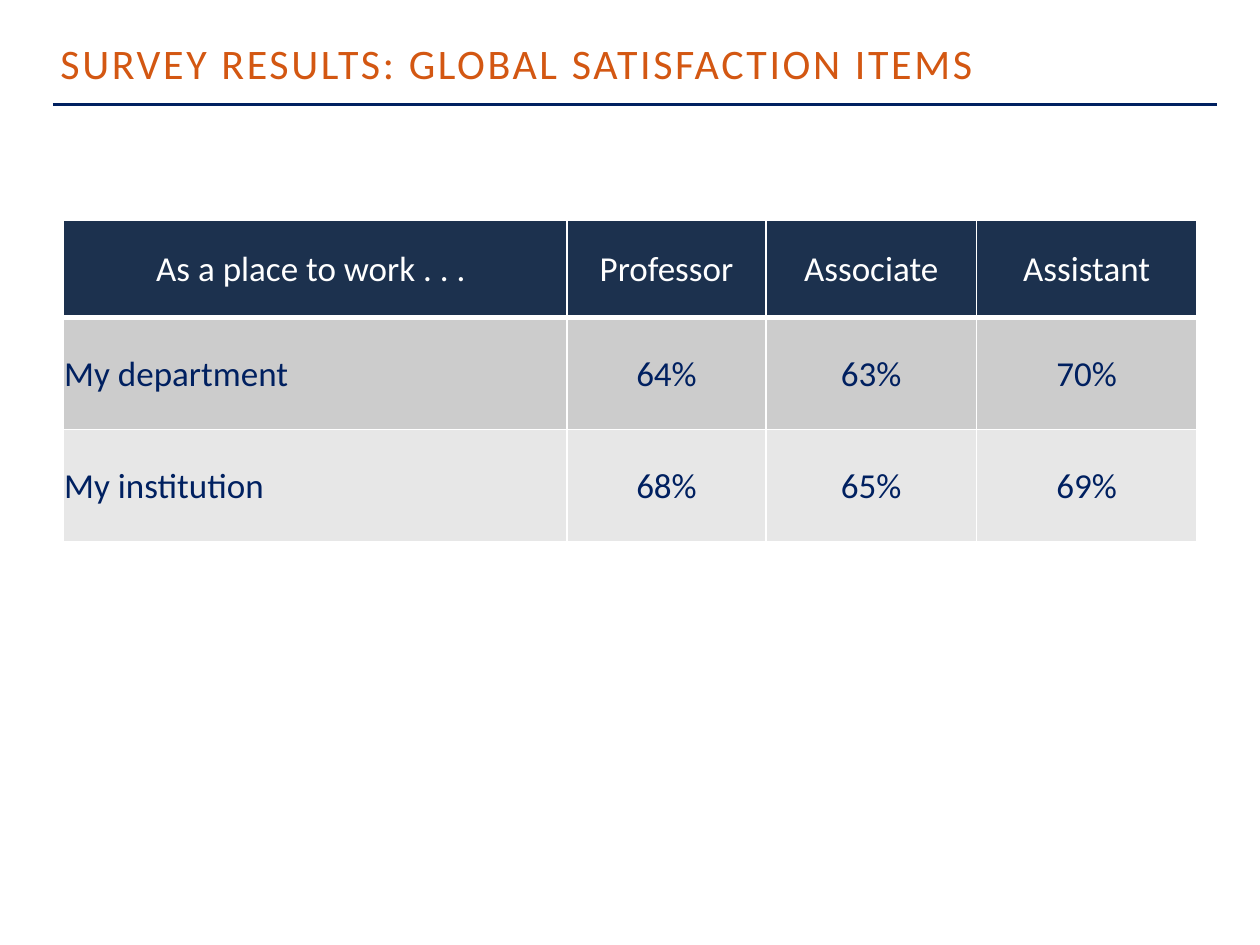
from dataclasses import dataclass

from lxml import etree
from pptx import Presentation
from pptx.dml.color import RGBColor
from pptx.enum.shapes import MSO_CONNECTOR, MSO_SHAPE
from pptx.enum.text import MSO_ANCHOR, PP_ALIGN
from pptx.oxml.ns import qn
from pptx.util import Inches, Pt

RECTANGLE = MSO_SHAPE.RECTANGLE
STRAIGHT = MSO_CONNECTOR.STRAIGHT
MIDDLE = MSO_ANCHOR.MIDDLE
LEFT, CENTER = PP_ALIGN.LEFT, PP_ALIGN.CENTER

# Content
TITLE = "SURVEY RESULTS: GLOBAL SATISFACTION ITEMS"
ROWS = [
    ("As a place to work . . . ", "Professor", "Associate", "Assistant"),
    ("My department", "64%", "63%", "70%"),
    ("My institution", "68%", "65%", "69%"),
]
COLUMN_WIDTHS = (4, 1.58, 1.67, 1.75)
ROW_HEIGHTS = (0.77, 0.89, 0.89)


@dataclass(frozen=True)
class Theme:
    font: str = "Calibri"
    title_size: int = 24
    table_size: int = 20
    background: str = "D3DFEF"
    white: str = "FFFFFF"
    navy: str = "002060"
    orange: str = "D35712"
    row_fills: tuple = ("1C314E", "CCCCCC", "E7E7E7")


THEME = Theme()


def color(value):
    return RGBColor.from_string(value)


def format_run(run, size, value):
    run.font.name = THEME.font
    run.font.size = Pt(size)
    run.font.color.rgb = color(value)


def add_borders(cell, bottom_width):
    properties = cell._tc.get_or_add_tcPr()
    widths = {"a:lnL": 1, "a:lnR": 1, "a:lnT": 1, "a:lnB": bottom_width}
    for tag, width in widths.items():
        line = etree.SubElement(properties, qn(tag), w=str(Pt(width)))
        fill = etree.SubElement(line, qn("a:solidFill"))
        etree.SubElement(fill, qn("a:srgbClr"), val=THEME.white)


presentation = Presentation()
presentation.slide_width = Inches(10)
presentation.slide_height = Inches(7.5)
slide = presentation.slides.add_slide(presentation.slide_layouts[6])

# Background and white panel
slide.background.fill.solid()
slide.background.fill.fore_color.rgb = color(THEME.background)
panel = slide.shapes.add_shape(
    RECTANGLE, 0, 0, presentation.slide_width, presentation.slide_height
)
panel.shadow.inherit = False
panel.fill.solid()
panel.fill.fore_color.rgb = color(THEME.white)
panel.line.fill.background()

# Rule under the title
rule = slide.shapes.add_connector(
    STRAIGHT, Inches(0.42), Inches(0.83), Inches(9.66), Inches(0.83)
)
rule.line.color.rgb = color(THEME.navy)
rule.line.width = Pt(2)
etree.SubElement(rule._element.spPr, qn("a:effectLst"))

# Title
title = slide.shapes.add_textbox(Inches(0.33), Inches(0.25), Inches(9.5), Inches(7.08))
text_frame = title.text_frame
text_frame.word_wrap = True
text_frame.margin_left = Inches(0.15)
text_frame.text = TITLE
title_run = text_frame.paragraphs[0].runs[0]
format_run(title_run, THEME.title_size, THEME.orange)
title_run.font._element.set("spc", "150")

# Satisfaction table
table = slide.shapes.add_table(
    len(ROWS), len(COLUMN_WIDTHS), Inches(0.5), Inches(1.75),
    Inches(sum(COLUMN_WIDTHS)), Inches(sum(ROW_HEIGHTS)),
).table
for column, width in zip(table.columns, COLUMN_WIDTHS):
    column.width = Inches(width)
for row, height in zip(table.rows, ROW_HEIGHTS):
    row.height = Inches(height)

for row_index, values in enumerate(ROWS):
    is_header = row_index == 0
    for column_index, value in enumerate(values):
        cell = table.cell(row_index, column_index)
        add_borders(cell, 3 if is_header else 1)
        cell.fill.solid()
        cell.fill.fore_color.rgb = color(THEME.row_fills[row_index])
        cell.vertical_anchor = MIDDLE
        cell.margin_left = cell.margin_right = cell.margin_top = Inches(0.01)
        cell.margin_bottom = 0
        cell.text_frame.text = value
        paragraph = cell.text_frame.paragraphs[0]
        paragraph.alignment = CENTER if is_header or column_index else LEFT
        text_color = THEME.white if is_header else THEME.navy
        format_run(paragraph.runs[0], THEME.table_size, text_color)
        paragraph.runs[0].font.bold = False

presentation.save("out.pptx")
